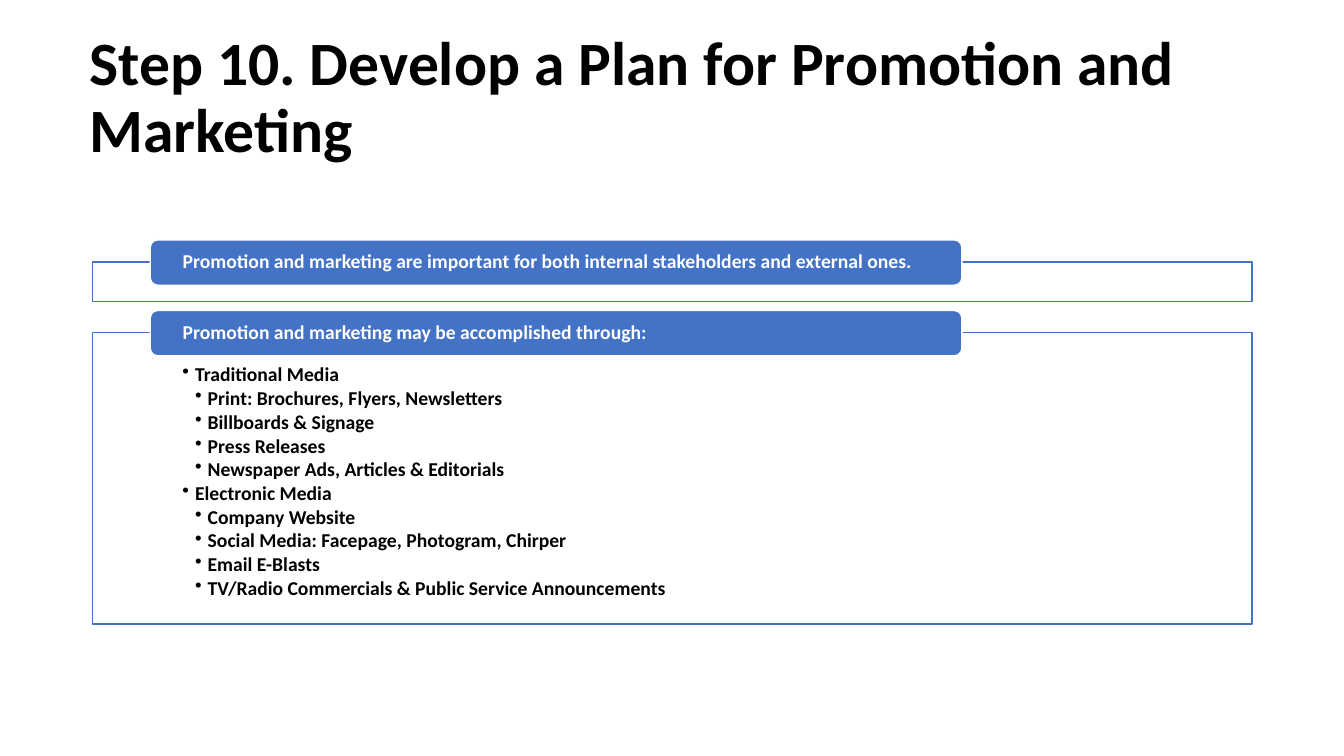
from pptx import Presentation
from pptx.dml.color import RGBColor
from pptx.enum import shapes, text
from pptx.oxml import ns
from pptx.util import Inches, Pt
from lxml import etree

BLUE, WHITE, BLACK = "4472C4", "FFFFFF", "000000"

deck = Presentation()
deck.slide_width, deck.slide_height = Inches(13.33), Inches(7.5)
slide = deck.slides.add_slide(deck.slide_layouts[6])


def style(par, size, color):
    par.alignment = text.PP_ALIGN.LEFT
    par.line_spacing = 0.9
    font = par.font
    font.name, font.size, font.bold = "Calibri", Pt(size), True
    font.color.rgb = RGBColor.from_string(color)


def block(kind, left, top, width, height, fill, line):
    shape = slide.shapes.add_shape(
        kind, Inches(left), Inches(top), Inches(width), Inches(height))
    shape.shadow.inherit = False
    shape.fill.solid()
    shape.fill.fore_color.rgb = RGBColor.from_string(fill)
    shape.line.color.rgb = RGBColor.from_string(line)
    shape.line.width = Pt(1)
    return shape


# Title, with hard spaces that hold the last line together
title = slide.shapes.add_textbox(
    Inches(0.79), Inches(0.26), Inches(11.5), Inches(1.45)).text_frame
title.word_wrap = True
title.vertical_anchor = text.MSO_ANCHOR.MIDDLE
title.text = "Step 10. Develop a Plan for Promotion and Marketing"
style(title.paragraphs[0], 44, BLACK)

# Sections: top, frame height, heading, bullets by level
media = [
    (1, "Traditional Media"),
    (2, "Print: Brochures, Flyers, Newsletters"),
    (2, "Billboards & Signage"),
    (2, "Press Releases"),
    (2, "Newspaper Ads, Articles & Editorials"),
    (1, "Electronic Media"),
    (2, "Company Website"),
    (2, "Social Media: Facepage, Photogram, Chirper"),
    (2, "Email E-Blasts"),
    (2, "TV/Radio Commercials & Public Service Announcements"),
]
parts = [
    (2.6, 0.39, "Promotion and marketing are important for both internal "
                "stakeholders and external ones.", []),
    (3.3, 2.89, "Promotion and marketing may be accomplished through:", media),
]

for top, height, head, items in parts:
    # Outlined frame
    frame = block(shapes.MSO_SHAPE.RECTANGLE,
                  0.92, top, 11.5, height, WHITE, BLUE)
    tint = frame.fill._xPr.find(".//" + ns.qn("a:srgbClr"))
    etree.SubElement(tint, ns.qn("a:alpha"), val="90000")

    # Bulleted list
    body = frame.text_frame
    body.vertical_anchor = text.MSO_ANCHOR.TOP
    body.margin_left = body.margin_right = Inches(0.89)
    body.margin_top, body.margin_bottom = Inches(0.32), Inches(0.11)
    for i, (level, item) in enumerate(items):
        par = body.add_paragraph() if i else body.paragraphs[0]
        par.text = item
        par.level = level
        par.space_after = Pt(1.8)
        style(par, 14, BLACK)
        props = par._p.get_or_add_pPr()
        props.set("marL", str(Inches(0.125 * level)))
        props.set("indent", str(-Inches(0.125)))
        etree.SubElement(props, ns.qn("a:buChar"), char="•")
        props.append(props.find(ns.qn("a:defRPr")))

    # Heading bar over the top edge
    bar = block(shapes.MSO_SHAPE.ROUNDED_RECTANGLE,
                1.49, top - 0.22, 8.05, 0.45, BLUE, WHITE)
    label = bar.text_frame
    label.word_wrap = True
    label.vertical_anchor = text.MSO_ANCHOR.MIDDLE
    label.margin_left = label.margin_right = Inches(0.3)
    label.margin_top = label.margin_bottom = 0
    label.text = head
    style(label.paragraphs[0], 14, WHITE)

deck.save("out.pptx")
